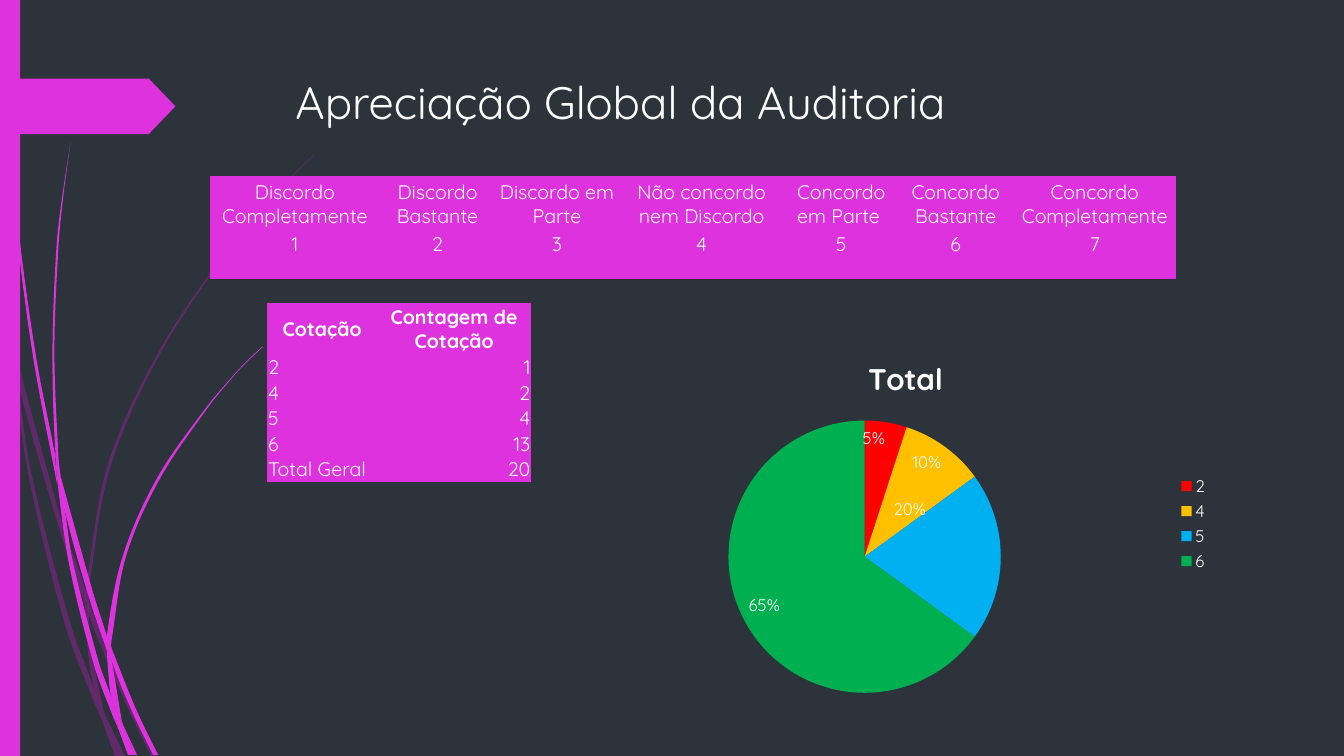
from dataclasses import dataclass
from math import hypot

from lxml import etree
from pptx import Presentation
from pptx.chart.data import CategoryChartData
from pptx.dml.color import RGBColor
from pptx.enum.chart import XL_CHART_TYPE as ChartType, XL_LABEL_POSITION as LabelPosition
from pptx.enum.chart import XL_LEGEND_POSITION as LegendPosition
from pptx.enum.shapes import MSO_SHAPE as Preset
from pptx.enum.text import MSO_ANCHOR as Anchor, MSO_AUTO_SIZE as AutoSize, PP_ALIGN as Align
from pptx.oxml import parse_xml
from pptx.oxml.ns import nsdecls, qn
from pptx.util import Inches, Pt


@dataclass(frozen=True)
class Theme:
    font: str = "Quicksand"
    background: str = "2C333A"
    accent: str = "DE32DE"
    faint: str = "B01CB0"
    text: str = "FFFFFF"
    slices: tuple = ("FF0000", "FFC000", "00B0F0", "00B050")
    title_size: float = 32.4
    table_size: float = 14
    spacer_size: int = 9
    chart_title_size: float = 21.3
    chart_size: float = 12


THEME = Theme()
NO_TABLE_STYLE = "{2D5ABB26-0587-4C30-8999-92F81FD0307C}"

# Corner points of each blade of grass, in inches
FAINT_BLADES = [
    [(0.11, 3.5), (0.09, 3.22), (0, 2.82), (0, 2.99), (0.1, 3.44)],
    [(0.58, 5.22), (0.84, 5.99), (0.85, 5.86), (0.62, 5.2), (0.14, 3.45), (0.17, 3.76)],
    [(0.92, 6.07), (0.88, 5.96), (0.88, 6.1), (1.23, 6.94), (1.5, 7.5), (1.55, 7.5), (1.27, 6.92)],
    [(1.19, 7.5), (1.24, 7.5), (1.05, 7.11)],
    [(0.93, 6.83), (0.7, 6.19), (0.31, 4.69), (0.17, 3.76), (0.11, 3.5), (0.28, 4.7),
     (0.65, 6.21), (0.92, 6.93), (1.01, 7.14), (0.99, 7.07)],
    [(0.84, 5.99), (0.87, 6.46), (0.93, 6.83), (0.96, 6.92), (1.05, 7.11), (1.03, 7.06),
     (0.91, 6.46), (0.88, 6.1), (0.88, 6.08)],
    [(0.88, 5.84), (1.1, 4.62), (1.6, 3.49), (2.29, 2.45), (2.68, 1.98), (2.9, 1.75), (3.12, 1.54), (3.12, 1.53),
     (2.89, 1.75), (2.68, 1.97), (2.28, 2.44), (1.58, 3.48), (1.07, 4.61), (0.85, 5.84), (0.85, 5.86), (0.88, 5.96)],
    [(1.01, 7.14), (1.14, 7.5), (1.19, 7.5)],
    [(0.88, 6.08), (0.88, 6.1), (0.88, 5.96), (0.85, 5.86), (0.84, 5.99)],
    [(0.96, 6.92), (0.93, 6.83), (0.99, 7.07), (1.01, 7.14), (1.19, 7.5), (1.05, 7.11)],
]
BRIGHT_BLADES = [
    [(0.07, 1.1), (0.17, 2.33), (0.33, 3.55), (0.56, 4.77), (0.57, 4.81), (0.55, 4.57), (0.55, 4.53),
     (0.36, 3.55), (0.19, 2.32), (0.08, 1.09), (0.05, 0.48), (0.04, 0), (0.03, 0), (0.04, 0.48)],
    [(0.88, 5.92), (1.06, 6.45), (1.06, 6.33), (1.06, 6.31), (0.93, 5.9), (0.6, 4.72), (0.64, 5.05)],
    [(1.13, 6.49), (1.1, 6.41), (1.11, 6.56), (1.32, 7.08), (1.52, 7.49), (1.57, 7.49), (1.36, 7.06)],
    [(1.1, 6.91), (0.98, 6.57), (0.72, 5.56), (0.64, 5.05), (0.57, 4.77), (0.68, 5.57), (0.93, 6.59),
     (1.11, 7.08), (1.17, 7.22), (1.16, 7.17)],
    [(0.6, 4.72), (0.58, 4.53), (0.54, 3.49), (0.58, 2.45), (0.63, 1.93), (0.7, 1.41),
     (0.62, 1.93), (0.56, 2.45), (0.52, 3.49), (0.55, 4.49)],
    [(1.33, 7.49), (1.36, 7.49), (1.22, 7.19)],
    [(0.57, 4.77), (0.64, 5.05), (0.6, 4.72), (0.55, 4.49), (0.55, 4.53)],
    [(1.11, 6.33), (1.25, 5.52), (1.58, 4.76), (2.05, 4.06), (2.31, 3.74), (2.45, 3.59), (2.61, 3.44), (2.6, 3.44),
     (2.45, 3.58), (2.31, 3.73), (2.04, 4.05), (1.56, 4.74), (1.22, 5.51), (1.06, 6.31), (1.1, 6.41)],
    [(1.17, 7.22), (1.27, 7.49), (1.31, 7.49)],
    [(1.06, 6.45), (1.1, 6.91), (1.16, 7.06), (1.22, 7.19), (1.21, 7.16), (1.11, 6.56), (1.09, 6.51)],
    [(1.06, 6.45), (1.09, 6.51), (1.11, 6.56), (1.1, 6.41), (1.06, 6.31), (1.06, 6.33)],
    [(1.16, 7.06), (1.1, 6.91), (1.16, 7.17), (1.17, 7.22), (1.3, 7.49), (1.33, 7.49), (1.22, 7.19)],
]
SCALE_ROWS = [
    ["Discordo Completamente", "Discordo Bastante", "Discordo em Parte", "Não concordo nem Discordo",
     "Concordo em Parte ", "Concordo Bastante", "Concordo Completamente"],
    [str(number) for number in range(1, 8)], [""] * 7]
COUNT_ROWS = [["Cotação", "Contagem de Cotação"], ["2", "1"], ["4", "2"], ["5", "4"], ["6", "13"],
              ["Total Geral", "20"]]


def style_font(font, size, bold=False):
    font.name, font.size, font.bold = THEME.font, Pt(size), bold
    font.color.rgb = RGBColor.from_string(THEME.text)


def paint(fill, color):
    fill.solid()
    fill.fore_color.rgb = RGBColor.from_string(color)


def paint_shape(shape, color):
    shape.shadow.inherit = False
    shape.line.fill.background()
    paint(shape.fill, color)


def handle(before, here, after, reach):
    """Offset of a curve handle at here; sharp corners get none."""
    (ax, ay), (bx, by), (cx, cy) = before, here, after
    into, out, across = hypot(bx - ax, by - ay), hypot(cx - bx, cy - by), hypot(cx - ax, cy - ay)
    if (bx - ax) * (cx - bx) + (by - ay) * (cy - by) < 0.8 * into * out:
        return 0, 0
    return (cx - ax) / across * reach / 3, (cy - ay) / across * reach / 3


def add_blade(slide, corners, color, opacity=100):
    points = [(Inches(x), Inches(y)) for x, y in corners]
    builder = slide.shapes.build_freeform(*points[0])
    builder.add_line_segments(points[1:] + points[:1], close=True)
    shape = builder.convert_to_shape()
    paint_shape(shape, color)
    if opacity < 100:
        color_element = shape._element.spPr.find(qn("a:solidFill"))[0]
        etree.SubElement(color_element, qn("a:alpha"), val=str(opacity * 1000))
    # Bend the straight sides
    for i, side in enumerate(list(shape._element.iter(qn("a:lnTo")))):
        before, start, end, after = (points[(i + k) % len(points)] for k in (-1, 0, 1, 2))
        reach = hypot(end[0] - start[0], end[1] - start[1])
        dx, dy = handle(before, start, end, reach)
        ex, ey = handle(start, end, after, reach)
        side.tag = qn("a:cubicBezTo")
        for k, (x, y) in enumerate([(start[0] + dx, start[1] + dy), (end[0] - ex, end[1] - ey)]):
            control = etree.Element(qn("a:pt"), x=str(round(x - shape.left)), y=str(round(y - shape.top)))
            side.insert(k, control)


def add_block(slide, preset, *box):
    shape = slide.shapes.add_shape(preset, *map(Inches, box))
    paint_shape(shape, THEME.accent)
    return shape


def set_title(slide, text):
    title, frame = slide.shapes.title, slide.shapes.title.text_frame
    title.left, title.top, title.width, title.height = map(Inches, (2.84, 0.68, 9.75, 1.4))
    frame.text = text
    frame.word_wrap, frame.auto_size, frame.vertical_anchor = True, AutoSize.NONE, Anchor.TOP
    frame.margin_left, frame.margin_top = Inches(0.09), Inches(0.06)
    frame.paragraphs[0].alignment = Align.LEFT
    style_font(frame.paragraphs[0].runs[0].font, THEME.title_size)


def fill_cell(cell, text, alignment, anchor, bold):
    paint(cell.fill, THEME.accent)
    cell.margin_left = cell.margin_right = cell.margin_top = Inches(0.01)
    cell.margin_bottom = 0
    cell.vertical_anchor = anchor
    cell.text_frame.text = text
    paragraph = cell.text_frame.paragraphs[0]
    paragraph.alignment = alignment
    for run in paragraph.runs:
        style_font(run.font, THEME.table_size, bold)
    if not text:
        etree.SubElement(paragraph._p, qn("a:endParaRPr"), sz=str(THEME.spacer_size * 100))


def add_table(slide, left, top, widths, heights, rows, cell_style):
    """cell_style(row, column) gives alignment, anchor and bold."""
    box = map(Inches, (left, top, sum(widths), sum(heights)))
    table = slide.shapes.add_table(len(rows), len(widths), *box).table
    table.horz_banding = False
    table._tbl.tblPr.find(qn("a:tableStyleId")).text = NO_TABLE_STYLE
    for column, width in zip(table.columns, widths):
        column.width = Inches(width)
    for r, (height, texts) in enumerate(zip(heights, rows)):
        table.rows[r].height = Inches(height)
        for c, text in enumerate(texts):
            fill_cell(table.cell(r, c), text, *cell_style(r, c))


def scale_style(row, column):
    return Align.CENTER, Anchor.MIDDLE, False


def count_style(row, column):
    if row == 0:
        return Align.CENTER, Anchor.MIDDLE, True
    return (Align.LEFT, Align.RIGHT)[column], Anchor.BOTTOM, False


def manual_layout(**values):
    fields = "".join(f'<c:{name} val="{value}"/>' for name, value in values.items())
    return parse_xml(f'<c:layout {nsdecls("c")}><c:manualLayout>{fields}</c:manualLayout></c:layout>')


def add_pie(slide):
    data = CategoryChartData()
    data.categories = ["2", "4", "5", "6"]
    data.add_series("Total", (5, 10, 20, 65))
    chart = slide.shapes.add_chart(ChartType.PIE, *map(Inches, (5.87, 3.37, 6.22, 3.65)), data).chart
    style_font(chart.font, THEME.chart_size)
    chart.chart_title.text_frame.text = "Total"
    style_font(chart.chart_title.text_frame.paragraphs[0].runs[0].font, THEME.chart_title_size, bold=True)
    chart.has_legend = True
    chart.legend.position, chart.legend.include_in_layout = LegendPosition.RIGHT, False
    style_font(chart.legend.font, THEME.chart_size)
    # Slices and their percentages
    chart.plots[0].vary_by_categories = True
    series = chart.plots[0].series[0]
    for index, color in enumerate(THEME.slices):
        paint(series.points[index].format.fill, color)
    labels, moved = series.data_labels, series.points[2].data_label
    labels.show_value, labels.show_percentage = False, True
    labels.number_format, labels.number_format_is_linked = "0%", False
    for label in (labels, moved):
        label.position = LabelPosition.INSIDE_END
        style_font(label.font, THEME.chart_size)
    # The 20% label sits away from its slice
    element = series._element.find(".//" + qn("c:dLbl"))
    element.find(qn("c:showVal")).set("val", "0")
    element.find(qn("c:showPercent")).set("val", "1")
    element.find(qn("c:idx")).addnext(manual_layout(x=-0.11, y=-0.13))
    # Place the pie inside the chart
    area = chart._chartSpace.find(".//" + qn("c:plotArea"))
    for layout in area.findall(qn("c:layout")):
        area.remove(layout)
    area.insert(0, manual_layout(layoutTarget="inner", xMode="edge", yMode="edge", x=0.21, y=0.22, w=0.45, h=0.74))


def main():
    presentation = Presentation()
    presentation.slide_width, presentation.slide_height = Inches(13.33), Inches(7.5)
    slide = presentation.slides.add_slide(presentation.slide_layouts[5])
    paint(slide.background.fill, THEME.background)
    # Decoration on the left
    for corners in FAINT_BLADES:
        add_blade(slide, corners, THEME.faint, opacity=40)
    for corners in BRIGHT_BLADES:
        add_blade(slide, corners, THEME.accent)
    add_block(slide, Preset.RECTANGLE, 0, 0, 0.2, 7.5)
    add_block(slide, Preset.PENTAGON, 0, 0.78, 1.74, 0.55).adjustments[0] = 0.48
    # Content
    set_title(slide, "Apreciação Global da Auditoria")
    add_table(slide, 2.08, 1.75, [1.69, 1.14, 1.23, 1.64, 1.13, 1.14, 1.62], [0.54, 0.24, 0.22],
              SCALE_ROWS, scale_style)
    add_table(slide, 2.65, 3.01, [1.09, 1.53], [0.5] + [0.25] * 5, COUNT_ROWS, count_style)
    add_pie(slide)
    presentation.save("out.pptx")


if __name__ == "__main__":
    main()
